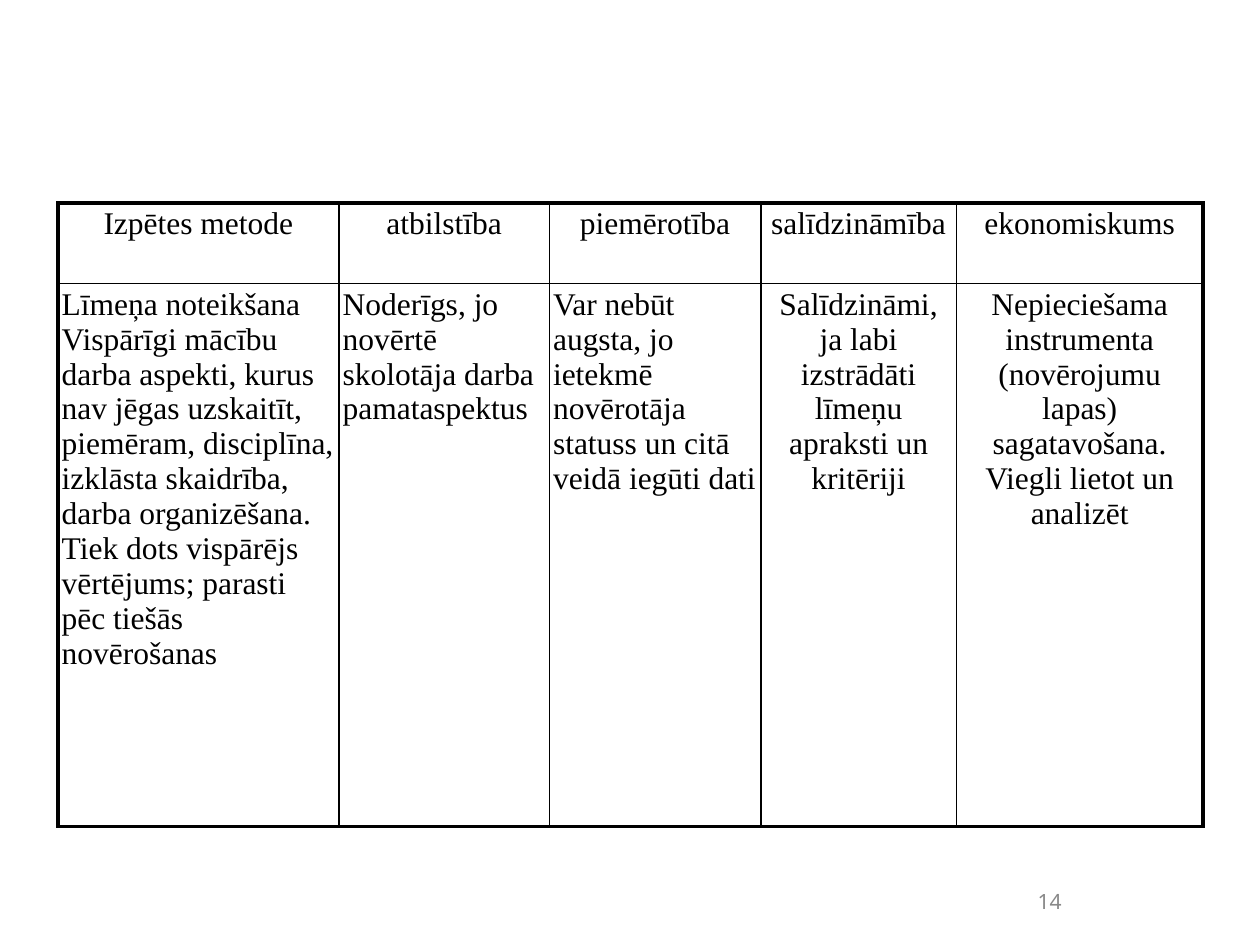
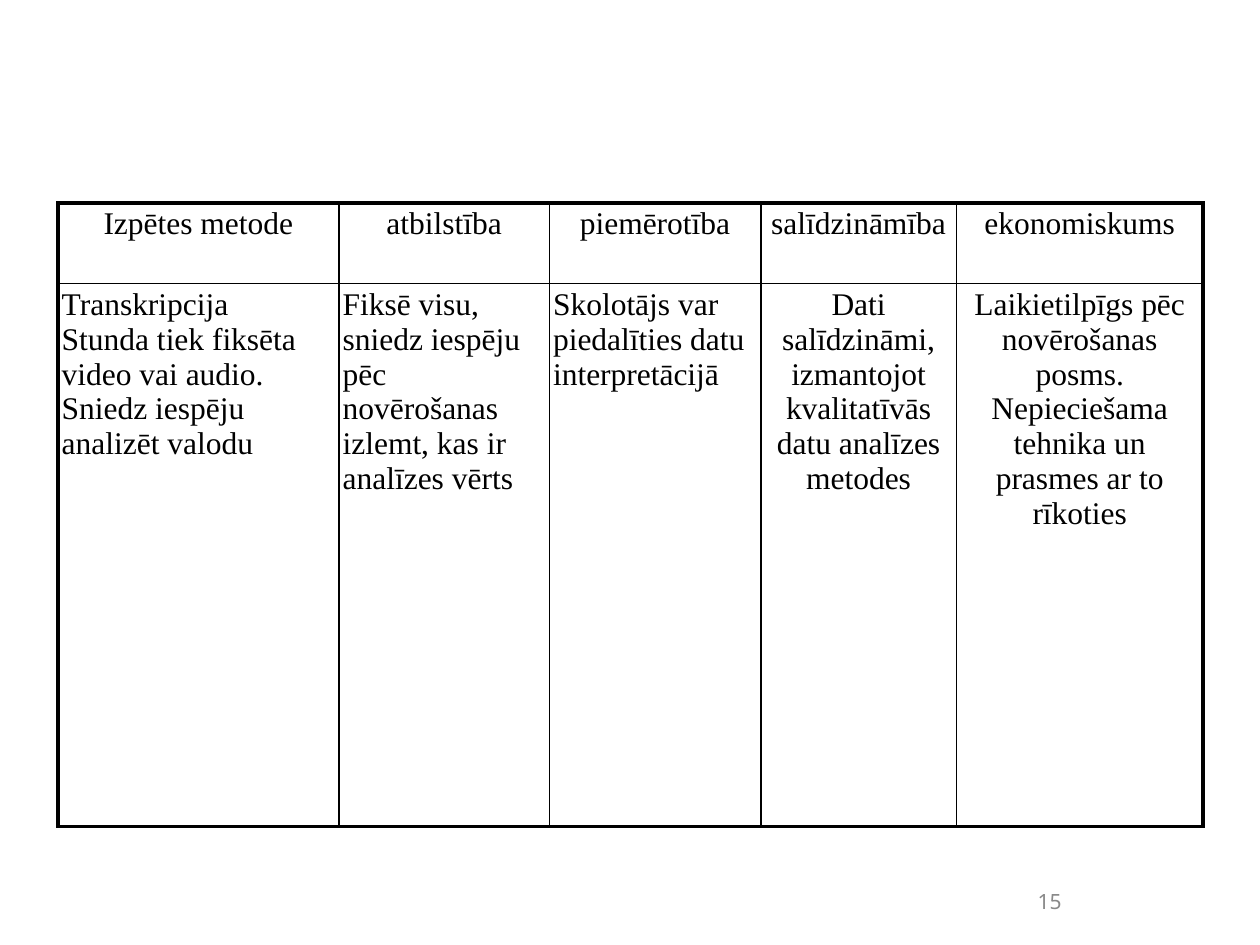
import pptx
import pptx.dml.color
import pptx.enum.text
import pptx.oxml
import pptx.oxml.ns
import pptx.util
from dataclasses import dataclass

Inches = pptx.util.Inches
Pt = pptx.util.Pt
RGB = pptx.dml.color.RGBColor
ALIGN = pptx.enum.text.PP_ALIGN
ANCHOR = pptx.enum.text.MSO_ANCHOR


@dataclass(frozen=True)
class Theme:
    ink: str = "000000"
    muted: str = "898989"
    body_font: str = "Times New Roman"
    number_font: str = "Noto Sans"
    body_size: float = 18
    number_size: float = 12
    outer_line: float = 2.25
    inner_line: float = 1


theme = Theme()


def add_run(p, text, font, size, color, align):
    p.alignment = align
    r = p.add_run()
    r.text = text
    r.font.name = font
    r.font.size = Pt(size)
    r.font.color.rgb = RGB.from_string(color)


def add_border(cell, side, width):
    cell._tc.get_or_add_tcPr().append(pptx.oxml.parse_xml(
        f'<a:ln{side} {pptx.oxml.ns.nsdecls("a")} w="{Pt(width)}">'
        f'<a:solidFill><a:srgbClr val="{theme.ink}"/></a:solidFill></a:ln{side}>'))


# Shared table layout
col_widths = [2.23, 1.67, 1.68, 1.55, 1.96]
row_heights = [0.64, 4.31]
body_aligns = [ALIGN.LEFT] * 3 + [ALIGN.CENTER] * 2
header = ["Izpētes metode", "atbilstība", "piemērotība", "salīdzināmība", "ekonomiskums"]

# One method per slide, keyed by page number; a line break starts a paragraph
methods = {
    14: [
        "Līmeņa noteikšana\n"
        "Vispārīgi mācību darba aspekti, kurus nav jēgas uzskaitīt, piemēram, "
        "disciplīna, izklāsta skaidrība, darba organizēšana. Tiek dots vispārējs "
        "vērtējums; parasti pēc tiešās novērošanas",
        "Noderīgs, jo novērtē skolotāja darba pamataspektus",
        "Var nebūt augsta, jo ietekmē novērotāja statuss un citā veidā iegūti dati",
        "Salīdzināmi, ja labi izstrādāti līmeņu apraksti un kritēriji",
        "Nepieciešama instrumenta (novērojumu lapas) sagatavošana. "
        "Viegli lietot un analizēt",
    ],
    15: [
        "Transkripcija\n"
        "Stunda tiek fiksēta video vai audio. Sniedz iespēju analizēt valodu",
        "Fiksē visu, sniedz iespēju pēc novērošanas izlemt, kas ir analīzes vērts",
        "Skolotājs var piedalīties datu interpretācijā",
        "Dati salīdzināmi, izmantojot kvalitatīvās datu analīzes metodes",
        "Laikietilpīgs pēc novērošanas posms. Nepieciešama tehnika un prasmes ar to rīkoties",
    ],
}

prs = pptx.Presentation()
prs.slide_width = Inches(10)
prs.slide_height = Inches(7.5)

for number, method in methods.items():
    slide = prs.slides.add_slide(prs.slide_layouts[6])

    # Page number
    sp = slide.shapes.add_textbox(Inches(8.16), Inches(6.99), Inches(0.34), Inches(0.32))
    tf = sp.text_frame
    tf.word_wrap = False
    tf.vertical_anchor = ANCHOR.MIDDLE
    tf.margin_left = tf.margin_right = 0
    add_run(tf.paragraphs[0], str(number), theme.number_font, theme.number_size,
            theme.muted, ALIGN.CENTER)

    # Table frame
    rows = [header, method]
    table = slide.shapes.add_table(
        len(rows), len(header), Inches(0.46), Inches(1.61),
        Inches(sum(col_widths)), Inches(sum(row_heights))).table
    table.first_row = table.horz_banding = False
    for column, width in zip(table.columns, col_widths):
        column.width = Inches(width)
    for row, height in zip(table.rows, row_heights):
        row.height = Inches(height)

    # Cells: thick lines on the outside, thin ones within
    for i, texts in enumerate(rows):
        for j, text in enumerate(texts):
            cell = table.cell(i, j)
            cell.margin_left = cell.margin_right = Inches(0.03)
            cell.margin_top = cell.margin_bottom = Inches(0.03)
            on_edge = {"L": j == 0, "R": j == len(header) - 1,
                       "T": i == 0, "B": i == len(rows) - 1}
            for side, outer in on_edge.items():
                add_border(cell, side, theme.outer_line if outer else theme.inner_line)
            cell.fill.background()
            tf = cell.text_frame
            for k, line in enumerate(text.split("\n")):
                p = tf.add_paragraph() if k else tf.paragraphs[0]
                add_run(p, line, theme.body_font, theme.body_size, theme.ink,
                        body_aligns[j] if i else ALIGN.CENTER)

prs.save("out.pptx")
